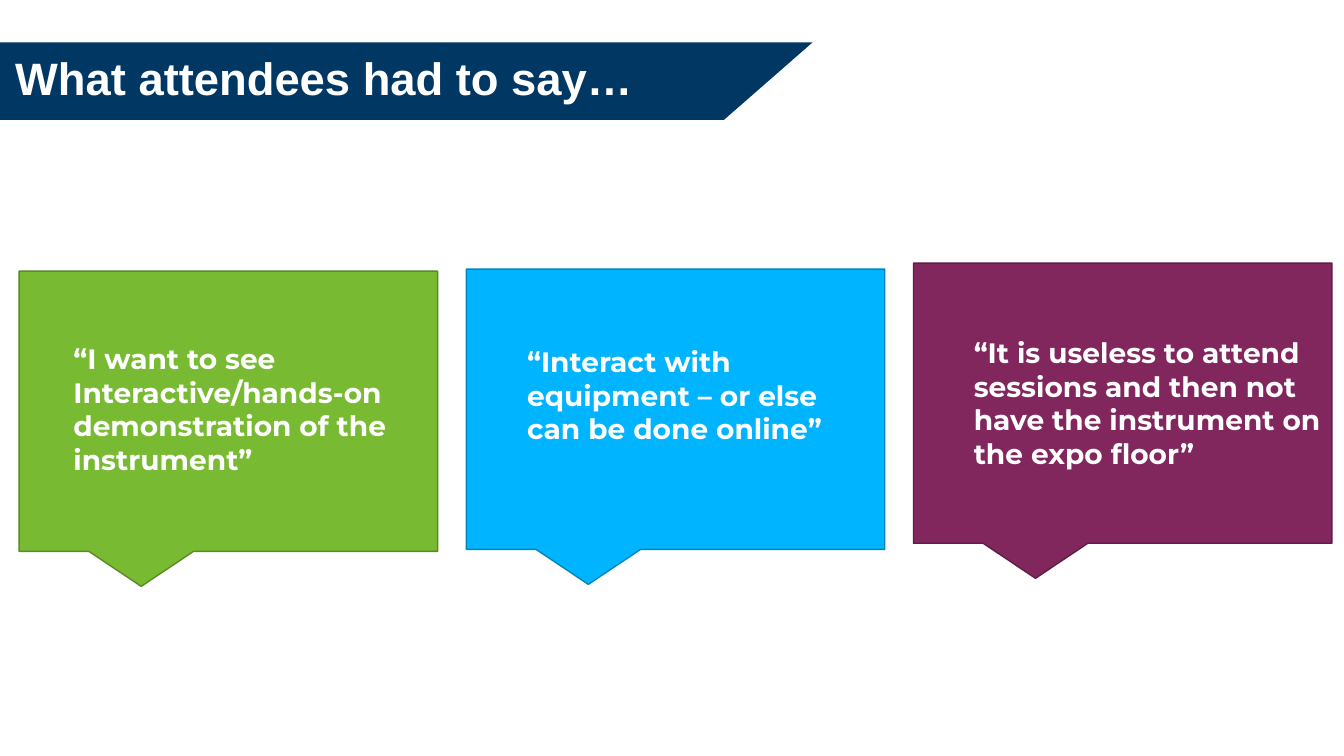
from dataclasses import dataclass

from pptx import Presentation
from pptx.dml.color import RGBColor as Rgb
from pptx.enum.shapes import MSO_SHAPE as Preset
from pptx.enum.text import MSO_ANCHOR as Anchor, MSO_AUTO_SIZE as AutoSize, PP_ALIGN as Align
from pptx.util import Inches, Pt


@dataclass(frozen=True)
class Theme:
    navy: str = "003863"
    white: str = "FFFFFF"
    green: tuple = ("78BB32", "598A25")
    blue: tuple = ("00B4FF", "0085BD")
    plum: tuple = ("81275E", "5F1D46")
    title_font: str = "Arial"
    quote_font: str = "Montserrat"
    title_size: float = 32.4
    quote_size: float = 20
    outline: float = 1


def apply(target, formats):
    for name, value in formats.items():
        setattr(target, name, value)


class QuoteSlide:
    """Draws a titled slide of quotations in speech callouts."""

    def __init__(self, deck, theme):
        self.theme = theme
        self.slide = deck.slides.add_slide(deck.slide_layouts[5])
        self.shapes = self.slide.shapes

    def style_text(self, paragraph, font, size):
        apply(paragraph.font, {"name": font, "size": Pt(size), "bold": True})
        paragraph.font.color.rgb = Rgb.from_string(self.theme.white)

    def paint(self, shape, fill):
        shape.shadow.inherit = False
        shape.fill.solid()
        shape.fill.fore_color.rgb = Rgb.from_string(fill)

    def banner(self, corners):
        start, *others = [(Inches(x), Inches(y)) for x, y in corners]
        outline = self.shapes.build_freeform(*start)
        outline.add_line_segments(others, close=True)
        ribbon = outline.convert_to_shape()
        self.paint(ribbon, self.theme.navy)
        ribbon.line.fill.background()
        self.shapes.title.element.addprevious(ribbon.element)

    def title(self, words, left, top, width, height):
        heading = self.shapes.title
        apply(heading, {"left": Inches(left), "top": Inches(top),
                        "width": Inches(width), "height": Inches(height)})
        heading.text = words
        apply(heading.text_frame, {"word_wrap": True, "auto_size": AutoSize.NONE,
                                   "vertical_anchor": Anchor.MIDDLE})
        line = heading.text_frame.paragraphs[0]
        apply(line, {"alignment": Align.LEFT, "line_spacing": 0.9})
        self.style_text(line, self.theme.title_font, self.theme.title_size)

    def callout(self, colors, left, top, width, height):
        fill, edge = colors
        bubble = self.shapes.add_shape(Preset.RECTANGULAR_CALLOUT, Inches(left), Inches(top),
                                       Inches(width), Inches(height))
        self.paint(bubble, fill)
        bubble.line.color.rgb = Rgb.from_string(edge)
        bubble.line.width = Pt(self.theme.outline)

    def quote(self, words, left, top, width, height):
        frame = self.shapes.add_textbox(Inches(left), Inches(top),
                                        Inches(width), Inches(height)).text_frame
        apply(frame, {"text": words, "word_wrap": True,
                      "auto_size": AutoSize.SHAPE_TO_FIT_TEXT})
        remark = frame.paragraphs[0]
        remark.level = 1
        indents = remark._p.get_or_add_pPr()
        indents.set("marL", str(Inches(0.5)))
        indents.set("indent", "0")
        self.style_text(remark, self.theme.quote_font, self.theme.quote_size)


def main():
    deck = Presentation()
    apply(deck, {"slide_width": Inches(13.33), "slide_height": Inches(7.5)})
    theme = Theme()
    page = QuoteSlide(deck, theme)

    page.banner([(-0.02, 0.42), (8.06, 0.42), (7.18, 1.19), (-0.02, 1.19)])
    page.title("What attendees had to say…", 0.05, 0.55, 7.32, 0.5)

    first_column, last_column = 0.19, 9.06
    pitch = (last_column - first_column) / 2
    bubble_size = (4.15, 2.78)
    remarks = [
        (theme.green, 2.69, "“I want to see Interactive/hands-on demonstration of the instrument”",
         (0.13, 3.34, 4.03, 1.45)),
        (theme.blue, 2.67, "“Interact with equipment – or else can be done online”",
         (4.63, 3.37, 3.93, 1.11)),
        (theme.plum, 2.61, "“It is useless to attend sessions and then not have the instrument on "
         "the expo floor”", (9.06, 3.28, 4.14, 1.45)),
    ]
    for column, (colors, top, words, text_area) in enumerate(remarks):
        page.callout(colors, first_column + column * pitch, top, *bubble_size)
        page.quote(words, *text_area)

    deck.save("out.pptx")


if __name__ == "__main__":
    main()
